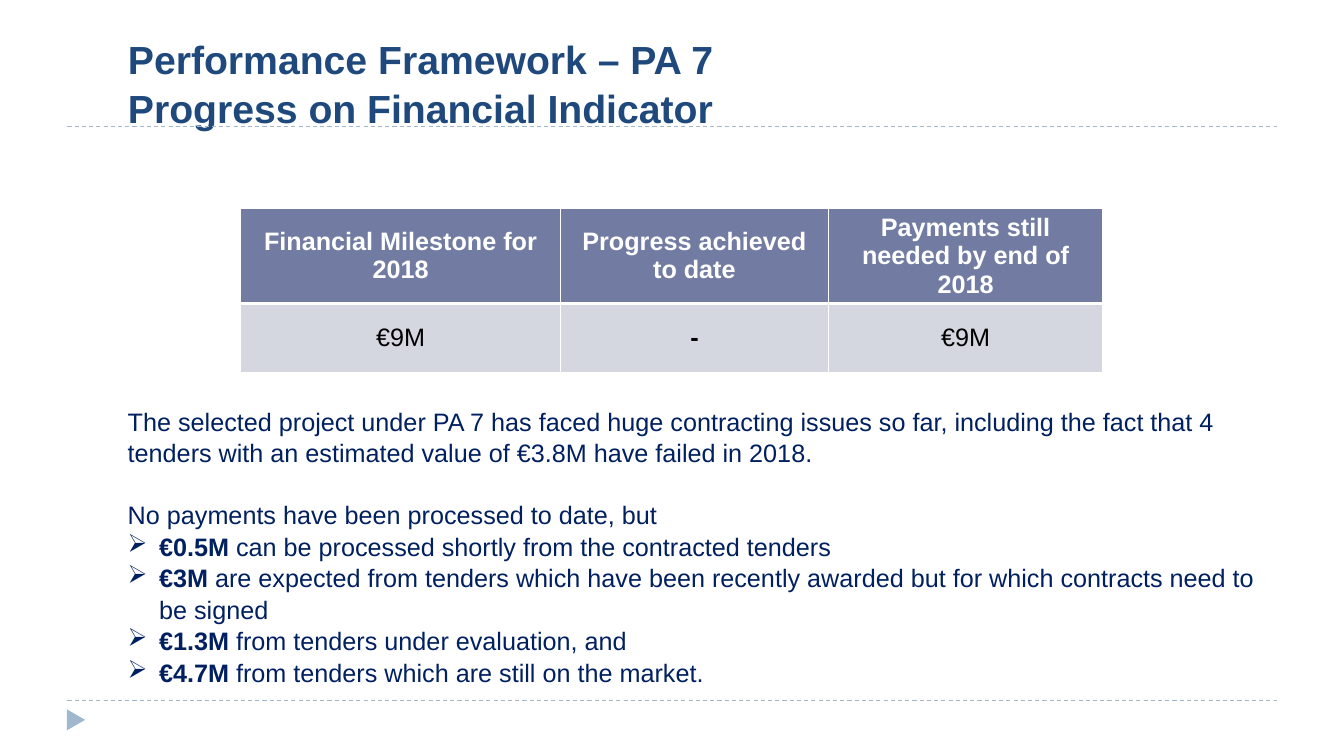
from dataclasses import dataclass

from lxml.etree import SubElement
from pptx import Presentation
from pptx.dml.color import RGBColor
from pptx.enum.dml import MSO_LINE
from pptx.enum.shapes import MSO_CONNECTOR, MSO_SHAPE
from pptx.enum.text import MSO_ANCHOR, MSO_AUTO_SIZE, PP_ALIGN
from pptx.oxml.ns import qn
from pptx.slide import Slide
from pptx.table import _Cell
from pptx.text.text import TextFrame, _Paragraph
from pptx.util import Cm, Pt


@dataclass(frozen=True)
class Theme:
    font: str = "Arial"
    title_size: int = 28
    body_size: int = 18
    line_spacing: float = 1.04
    title: str = "1F497D"
    body: str = "002060"
    accent: str = "9FB8CD"
    header_fill: str = "727CA3"
    value_fill: str = "D5D7E0"
    white: str = "FFFFFF"
    black: str = "000000"


@dataclass(frozen=True)
class Column:
    header: str
    value: str
    width: float
    bold_value: bool = False


@dataclass(frozen=True)
class Statement:
    text: str
    amount: str = ""
    space_before: int = 0


THEME = Theme()
LEFT = 2.97
RULE_LEFT, RULE_RIGHT = 1.7, 32.18
RULE_TOPS = (17.65, 3.18)
HEADER_HEIGHT, VALUE_HEIGHT = 2.34, 1.73

COLUMNS = (
    Column("Financial Milestone for 2018", "€9M", 8.05),
    Column("Progress achieved to date", "-", 6.76, bold_value=True),
    Column("Payments still needed by end of 2018", "€9M", 6.91),
)
STATEMENTS = (
    Statement("The selected project under PA 7 has faced huge contracting issues so far, "
              "including the fact that 4 tenders with an estimated value of €3.8M have "
              "failed in 2018."),
    Statement("No payments have been processed to date, but", space_before=22),
    Statement(" can be processed shortly from the contracted tenders", "€0.5M"),
    Statement(" are expected from tenders which have been recently awarded but for which "
              "contracts need to be signed", "€3M"),
    Statement(" from tenders under evaluation, and", "€1.3M"),
    Statement(" from tenders which are still on the market.", "€4.7M"),
)


def set_font(paragraph: _Paragraph, size: int, color: str, bold: bool = False) -> None:
    font = paragraph.font
    font.name = THEME.font
    font.size = Pt(size)
    font.bold = bold
    font.color.rgb = RGBColor.from_string(color)


def add_rule(slide: Slide, top: float) -> None:
    rule = slide.shapes.add_connector(
        MSO_CONNECTOR.STRAIGHT, Cm(RULE_LEFT), Cm(top), Cm(RULE_RIGHT), Cm(top))
    rule.line.color.rgb = RGBColor.from_string(THEME.accent)
    rule.line.width = Pt(0.75)
    rule.line.dash_style = MSO_LINE.DASH
    SubElement(rule.element.spPr, qn("a:effectLst"))


def add_corner_marker(slide: Slide) -> None:
    marker = slide.shapes.add_shape(
        MSO_SHAPE.ISOSCELES_TRIANGLE, Cm(1.65), Cm(17.91), Cm(0.53), Cm(0.46))
    marker.rotation = 90
    marker.shadow.inherit = False
    marker.fill.solid()
    marker.fill.fore_color.rgb = RGBColor.from_string(THEME.accent)
    marker.line.fill.background()


def format_title(slide: Slide) -> None:
    title = slide.shapes.title
    title.left, title.top, title.width, title.height = Cm(LEFT), Cm(1.93), Cm(19.35), Cm(1.5)
    frame = title.text_frame
    frame.auto_size = MSO_AUTO_SIZE.NONE
    frame.vertical_anchor = MSO_ANCHOR.BOTTOM
    frame.text = "Performance Framework – PA 7\vProgress on Financial Indicator"
    para = frame.paragraphs[0]
    para.alignment = PP_ALIGN.LEFT
    para.line_spacing = THEME.line_spacing
    set_font(para, THEME.title_size, THEME.title, bold=True)


def set_borders(cell: _Cell, bottom_width: float) -> None:
    properties = cell._tc.get_or_add_tcPr()
    for side, width in (("L", 1), ("R", 1), ("T", 1), ("B", bottom_width)):
        border = SubElement(properties, qn(f"a:ln{side}"), w=str(Pt(width)))
        SubElement(SubElement(border, qn("a:solidFill")), qn("a:srgbClr"), val=THEME.white)


def fill_cell(cell: _Cell, text: str, fill: str, color: str, bold: bool,
              bottom_width: float) -> None:
    set_borders(cell, bottom_width)
    cell.fill.solid()
    cell.fill.fore_color.rgb = RGBColor.from_string(fill)
    cell.vertical_anchor = MSO_ANCHOR.MIDDLE
    cell.text = text
    para = cell.text_frame.paragraphs[0]
    para.alignment = PP_ALIGN.CENTER
    set_font(para, THEME.body_size, color, bold)


def add_indicator_table(slide: Slide) -> None:
    total_width = sum(column.width for column in COLUMNS)
    table = slide.shapes.add_table(
        2, len(COLUMNS), Cm(6.07), Cm(5.26), Cm(total_width),
        Cm(HEADER_HEIGHT + VALUE_HEIGHT)).table
    table.rows[0].height, table.rows[1].height = Cm(HEADER_HEIGHT), Cm(VALUE_HEIGHT)
    for index, column in enumerate(COLUMNS):
        table.columns[index].width = Cm(column.width)
        fill_cell(table.cell(0, index), column.header, THEME.header_fill, THEME.white, True, 3)
        fill_cell(table.cell(1, index), column.value, THEME.value_fill, THEME.black,
                  column.bold_value, 1)


def add_bullet(para: _Paragraph) -> None:
    properties = para._p.get_or_add_pPr()
    properties.set("marL", str(Cm(0.79)))
    properties.set("indent", str(-Cm(0.79)))
    SubElement(properties, qn("a:buChar"), char="➢")


def write_statement(frame: TextFrame, index: int, statement: Statement) -> None:
    para = frame.add_paragraph() if index else frame.paragraphs[0]
    if statement.amount:
        add_bullet(para)
        amount = para.add_run()
        amount.text = statement.amount
        amount.font.bold = True
    para.add_run().text = statement.text
    para.line_spacing = THEME.line_spacing
    if statement.space_before:
        para.space_before = Pt(statement.space_before)
    set_font(para, THEME.body_size, THEME.body)


def add_statements(slide: Slide) -> None:
    box = slide.shapes.add_textbox(Cm(LEFT), Cm(10.08), Cm(29.49), Cm(7.19))
    box.text_frame.word_wrap = True
    for index, statement in enumerate(STATEMENTS):
        write_statement(box.text_frame, index, statement)


def main() -> None:
    deck = Presentation()
    deck.slide_width, deck.slide_height = Cm(33.87), Cm(19.05)
    slide = deck.slides.add_slide(deck.slide_layouts.get_by_name("Title Only"))
    for top in RULE_TOPS:
        add_rule(slide, top)
    add_corner_marker(slide)
    format_title(slide)
    add_indicator_table(slide)
    add_statements(slide)
    deck.save("out.pptx")


if __name__ == "__main__":
    main()
